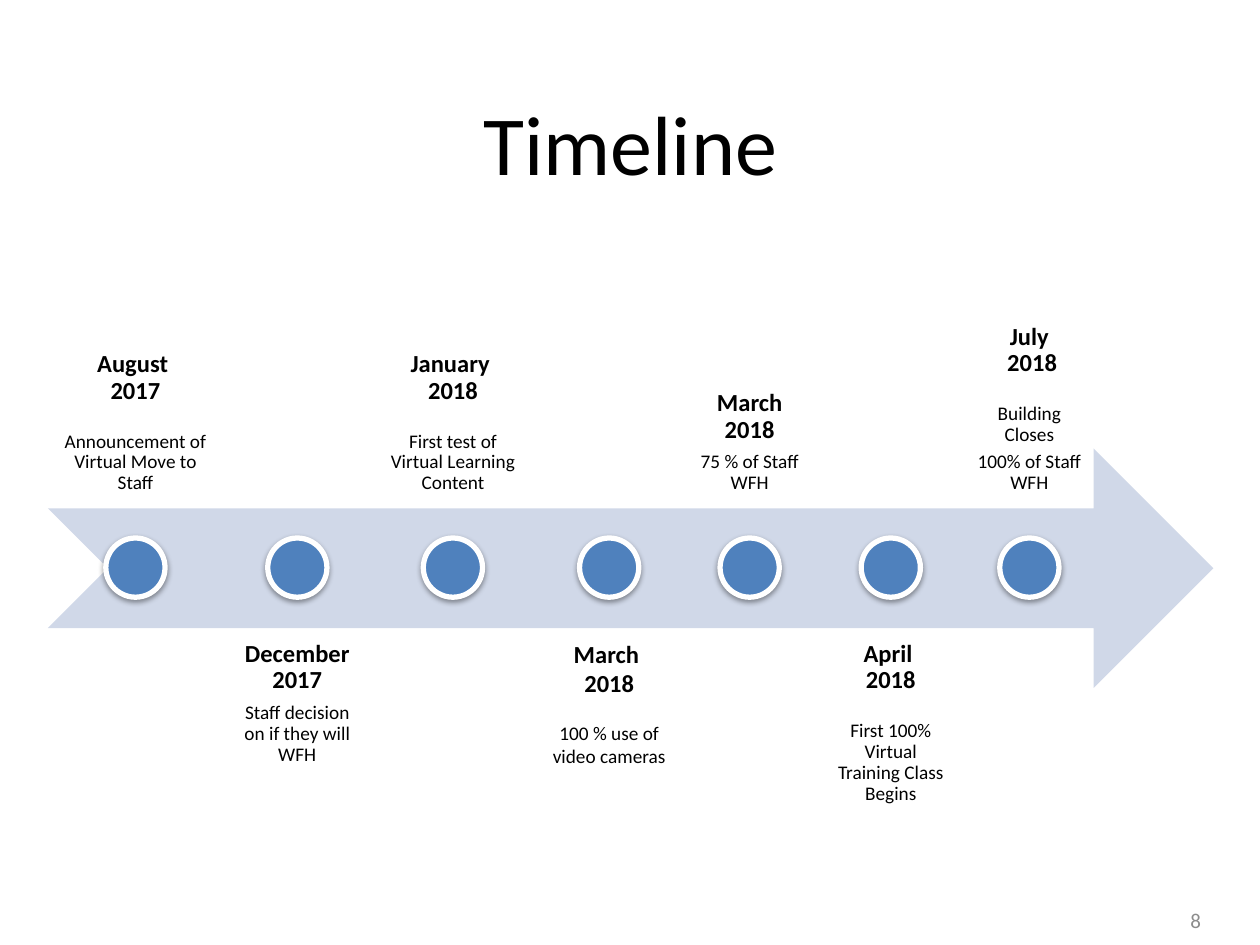
"""Build a timeline slide with seven milestones along an arrow."""
from lxml import etree
from pptx import Presentation
from pptx.dml.color import RGBColor
from pptx.enum import shapes, text
from pptx.oxml import ns
from pptx.util import Inches, Pt

MID = text.PP_ALIGN.CENTER
TOP, BASE = text.MSO_ANCHOR.TOP, text.MSO_ANCHOR.BOTTOM


def hue(code):
    return RGBColor.from_string(code)


def write(para, words, size, bold=False, color="000000", align=MID):
    para.alignment = align
    run = para.add_run()
    run.text = words
    font = run.font
    font.name, font.size, font.bold = "Calibri", Pt(size), bold
    font.color.rgb = hue(color)


deck = Presentation()
deck.slide_width, deck.slide_height = Inches(10), Inches(7.5)
slide = deck.slides.add_slide(deck.slide_layouts[5])
parts = slide.shapes

title = parts.title
title.left, title.top = Inches(0.38), Inches(0.67)
title.width, title.height = Inches(9.25), Inches(0.92)
title.text_frame.vertical_anchor = text.MSO_ANCHOR.MIDDLE
write(title.text_frame.paragraphs[0], "Timeline", 48)

arrow = parts.add_shape(shapes.MSO_SHAPE.NOTCHED_RIGHT_ARROW,
                        Inches(0.38), Inches(3.56), Inches(9.25), Inches(1.9))
arrow.shadow.inherit = False
arrow.fill.solid()
arrow.fill.fore_color.rgb = hue("D0D8E8")
arrow.line.fill.background()

# left, top, width, anchor, top inset, line spacing, gap, dates, notes
HIGH, LOW = (2.13, BASE, 0.11, 0.9), (4.98, TOP, 0.11, 0.9)
steps = [
    (0.38, 1.39, HIGH, 15.4, ["August ", "2017"], ["Announcement of Virtual Move to Staff"]),
    (1.83, 1.06, LOW, 5, ["December 2017"], ["Staff decision on if they will WFH"]),
    (2.94, 1.31, HIGH, 15.4, ["January ", "2018"], ["First test of Virtual Learning Content"]),
    (4.24, 1.19, (4.92, TOP, 0.15, 1.0), 13.4, ["March ", "2018"], ["100 % use of video cameras"]),
    (5.42, 1.06, HIGH, 5, ["March 2018"], ["75 % of Staff WFH"]),
    (6.54, 1.06, LOW, 15.4, ["April ", "2018"], ["First 100% Virtual Training Class Begins"]),
    (7.64, 1.06, HIGH, 15.4, ["July", " 2018"], ["Building Closes", "100% of Staff WFH"]),
]
SIZE = 0.47
for left, width, (top, anchor, inset, pitch), gap, dates, notes in steps:
    label = parts.add_textbox(Inches(left), Inches(top), Inches(width), Inches(1.9))
    frame = label.text_frame
    frame.word_wrap = True
    frame.vertical_anchor = anchor
    frame.margin_left = frame.margin_right = Inches(0.11)
    frame.margin_top, frame.margin_bottom = Inches(inset), Inches(0.11)
    for num, words in enumerate(dates + notes):
        para = frame.add_paragraph() if num else frame.paragraphs[0]
        para.line_spacing = pitch
        if num == len(dates):
            para.space_before = Pt(gap)
        elif num > len(dates):
            para.space_before = Pt(4)
        head = num < len(dates)
        write(para, words, 14 if head else 11, head)

    dot = parts.add_shape(shapes.MSO_SHAPE.OVAL, Inches(left + (width - SIZE) / 2),
                          Inches(4.27), Inches(SIZE), Inches(SIZE))
    dot.fill.solid()
    dot.fill.fore_color.rgb = hue("4F81BD")
    dot.line.color.rgb = hue("FFFFFF")
    dot.line.width = Pt(3)
    dot.shadow.inherit = False
    glow = etree.SubElement(dot.element.spPr.find(ns.qn("a:effectLst")), ns.qn("a:outerShdw"),
                            blurRad=str(Pt(3.1)), dist=str(Pt(1.6)), dir="5400000", rotWithShape="0")
    tint = etree.SubElement(glow, ns.qn("a:srgbClr"), val="000000")
    etree.SubElement(tint, ns.qn("a:alpha"), val="38000")

page = parts.add_textbox(Inches(7.17), Inches(7.1), Inches(2.46), Inches(0.4))
page.text_frame.word_wrap = True
page.text_frame.vertical_anchor = text.MSO_ANCHOR.MIDDLE
write(page.text_frame.paragraphs[0], "8", 12, color="8C8C8C", align=text.PP_ALIGN.RIGHT)

deck.save("out.pptx")
